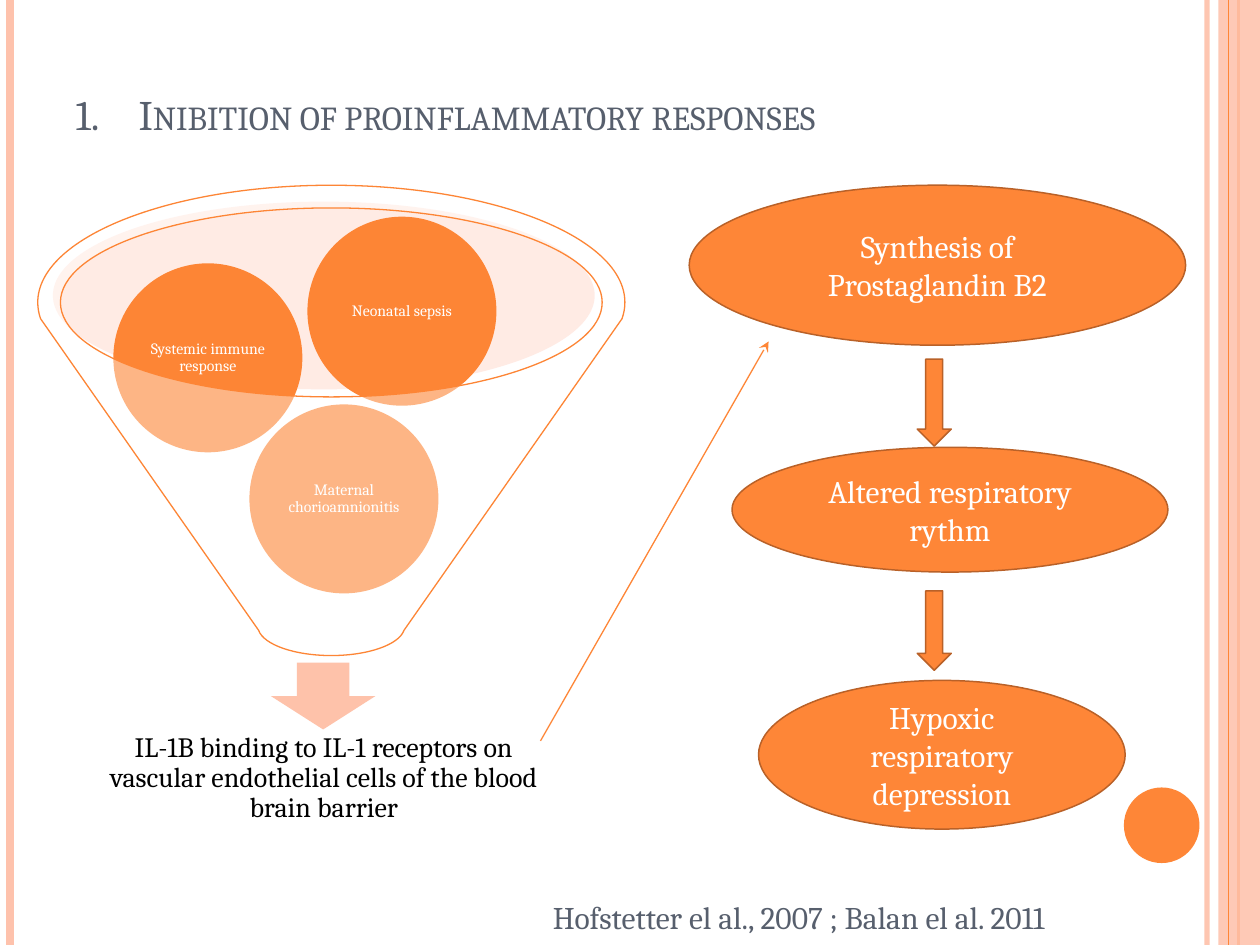
from math import cos, radians, sin, tan

from lxml import etree
from pptx import Presentation
from pptx.dml.color import RGBColor
from pptx.enum.shapes import MSO_CONNECTOR, MSO_SHAPE
from pptx.enum.text import MSO_ANCHOR, PP_ALIGN
from pptx.oxml.ns import qn
from pptx.util import Inches, Pt

STRAIGHT = MSO_CONNECTOR.STRAIGHT
OVAL, RECTANGLE, DOWN_ARROW = MSO_SHAPE.OVAL, MSO_SHAPE.RECTANGLE, MSO_SHAPE.DOWN_ARROW
CENTER, LEFT = PP_ALIGN.CENTER, PP_ALIGN.LEFT
MIDDLE, BOTTOM = MSO_ANCHOR.MIDDLE, MSO_ANCHOR.BOTTOM

ORANGE = RGBColor(0xFE, 0x86, 0x37)
FUNNEL_ORANGE = RGBColor(0xFD, 0x85, 0x35)
DARK_ORANGE = RGBColor(0xB9, 0x61, 0x28)
PEACH = RGBColor(0xFE, 0xC2, 0xAC)
ARROW_PEACH = RGBColor(0xFE, 0xC2, 0xAA)
PALE_PEACH = RGBColor(0xFF, 0xCD, 0xBD)
SLATE = RGBColor(0x57, 0x5F, 0x6D)
WHITE = RGBColor(0xFF, 0xFF, 0xFF)
BLACK = RGBColor(0, 0, 0)
FONT = "Cambria"

WIDTH, HEIGHT = 10, 7.5
TITLE = "Inibition of proinflammatory responses"
CITATION = "Hofstetter el al., 2007 ; Balan el al. 2011"
OUTCOME = "IL-1B binding to IL-1 receptors on vascular endothelial cells of the blood brain barrier"
CAUSES = [
    ("Maternal chorioamnionitis", 1.98, 3.21),
    ("Systemic immune response", 0.9, 2.09),
    ("Neonatal sepsis", 2.44, 1.72),
]
CAUSE_SIZE, LABEL_OFFSET = 1.5, 0.22
EFFECTS = [
    ("Synthesis of Prostaglandin B2", (5.47, 1.47, 3.94, 1.27)),
    ("Altered respiratory rythm", (5.81, 3.55, 3.46, 0.99)),
    ("Hypoxic respiratory depression", (6.02, 5.4, 2.91, 1.18)),
]
EFFECT_ARROWS = [(7.28, 2.85, 0.27, 0.69), (7.28, 4.69, 0.27, 0.63)]
BORDER_LINES = [(9.58, PEACH, 3, 93), (0.08, PEACH, 4.5, 100), (9.83, ORANGE, 1.5, 100)]

FUNNEL_X, RIM_Y, SPOUT_Y = 2.63, 2.4, 4.97
RIM = (2.33, 0.93)
OPENING = (2.15, 0.75)
SPOUT = tuple(radius / 4 for radius in RIM)
RIM_ANGLES = (172, 180, 270, 360, 368)
SPOUT_ANGLES = (8, 90, 172)
OPENING_ANGLES = (180, 90, 0, -90, -180)


def set_alpha(properties, percent):
    color = next(properties.iter(qn("a:srgbClr")))
    etree.SubElement(color, qn("a:alpha"), val=str(percent * 1000))


def write(shape, text, size, color, inset=(0.1, 0.05), spacing=1.0, anchor=MIDDLE, align=CENTER):
    frame = shape.text_frame
    horizontal, vertical = map(Inches, inset)
    frame_format = {
        "word_wrap": True, "vertical_anchor": anchor,
        "margin_left": horizontal, "margin_right": horizontal,
        "margin_top": vertical, "margin_bottom": vertical,
    }
    for name, value in frame_format.items():
        setattr(frame, name, value)
    paragraph = frame.paragraphs[0]
    paragraph.alignment = align
    paragraph.line_spacing = spacing
    run = paragraph.add_run()
    run.text = text
    for name, value in {"name": FONT, "size": Pt(size), "bold": False}.items():
        setattr(run.font, name, value)
    run.font.color.rgb = color
    return paragraph, run


def style(shape, fill, line=None, width=0.85, alpha=100):
    shape.shadow.inherit = False
    shape.fill.solid()
    shape.fill.fore_color.rgb = fill
    if alpha < 100:
        set_alpha(shape.fill._xPr.find(qn("a:solidFill")), alpha)
    if line is None:
        shape.line.fill.background()
    else:
        shape.line.color.rgb = line
        shape.line.width = Pt(width)


def add_shape(shapes, kind, box, fill, **options):
    shape = shapes.add_shape(kind, *map(Inches, box))
    style(shape, fill, **options)
    return shape


def add_label(shapes, box, *content, **options):
    write(shapes.add_textbox(*map(Inches, box)), *content, spacing=0.9, **options)


def add_line(shapes, start, end, color, width, alpha=100):
    line = shapes.add_connector(STRAIGHT, *map(Inches, start + end))
    line.line.color.rgb = color
    line.line.width = Pt(width)
    properties = line._element.spPr
    if alpha < 100:
        set_alpha(properties, alpha)
    etree.SubElement(properties, qn("a:effectLst"))
    return line


def add_border(shapes):
    for x, color, width, alpha in BORDER_LINES:
        add_line(shapes, (x, 0), (x, HEIGHT), color, width, alpha)
    add_shape(shapes, RECTANGLE, (9.67, 0, 0.33, HEIGHT), PEACH, alpha=87)
    add_line(shapes, (9.75, 0), (9.75, HEIGHT), ORANGE, 0.75)
    add_shape(shapes, OVAL, (8.92, 6.25, 0.6, 0.6), ORANGE)


def add_title(title):
    box = dict(zip(("left", "top", "width", "height"), (0.5, 0.3, 8.17, 0.85)))
    for name, value in box.items():
        setattr(title, name, Inches(value))
    paragraph, run = write(title, TITLE, 24, SLATE, anchor=BOTTOM, align=LEFT)
    run.font._element.set("cap", "small")
    properties = paragraph._p.get_or_add_pPr()
    properties.set("marL", str(Inches(0.5)))
    properties.set("indent", str(-Inches(0.5)))
    etree.SubElement(properties, qn("a:buFont"), typeface="+mj-lt")
    etree.SubElement(properties, qn("a:buAutoNum"), type="arabicPeriod")


def arc(center_y, radii, angles):
    def point(angle, pull=0):
        turn = radians(angle)
        x = FUNNEL_X + radii[0] * (cos(turn) - pull * sin(turn))
        y = center_y + radii[1] * (sin(turn) + pull * cos(turn))
        return Inches(x), Inches(y)

    handles = []
    for start, end in zip(angles, angles[1:]):
        pull = 4 / 3 * tan(radians(end - start) / 4)
        handles.append((point(start, pull), point(end, -pull)))
    return [point(angle) for angle in angles], handles


def add_funnel(shapes):
    rim, rim_handles = arc(RIM_Y, RIM, RIM_ANGLES)
    spout, spout_handles = arc(SPOUT_Y, SPOUT, SPOUT_ANGLES)
    opening, opening_handles = arc(RIM_Y, OPENING, OPENING_ANGLES)
    builder = shapes.build_freeform(*rim[0])
    builder.add_line_segments(rim[1:] + spout, close=True)
    builder.move_to(*opening[0])
    builder.add_line_segments(opening[1:], close=True)
    funnel = builder.convert_to_shape()
    segments = list(funnel._element.iter(qn("a:lnTo")))
    for segment, handles in zip(segments, rim_handles + [()] + spout_handles + opening_handles):
        if handles:
            curve = etree.Element(qn("a:cubicBezTo"))
            for x, y in handles:
                etree.SubElement(curve, qn("a:pt"), x=str(x - funnel.left), y=str(y - funnel.top))
            curve.append(segment[0])
            segment.getparent().replace(segment, curve)
    style(funnel, WHITE, line=FUNNEL_ORANGE, width=0.75, alpha=40)


def add_causes(shapes):
    add_shape(shapes, OVAL, (0.42, 1.6, 4.3, 1.49), PALE_PEACH, alpha=40)
    add_shape(shapes, DOWN_ARROW, (2.15, 5.26, 0.83, 0.53), ARROW_PEACH)
    add_label(shapes, (0.57, 5.68, 4, 1), OUTCOME, 16, BLACK, inset=(0.12, 0.12))
    label_size = CAUSE_SIZE - 2 * LABEL_OFFSET
    for text, left, top in CAUSES:
        add_shape(shapes, OVAL, (left, top, CAUSE_SIZE, CAUSE_SIZE), FUNNEL_ORANGE)
        box = (left + LABEL_OFFSET, top + LABEL_OFFSET, label_size, label_size)
        add_label(shapes, box, text, 9, WHITE, inset=(0.01, 0.01))
    add_funnel(shapes)


def add_effects(shapes):
    link = add_line(shapes, (4.29, 5.88), (6.1, 2.71), ORANGE, 0.75)
    etree.SubElement(link.line._get_or_add_ln(), qn("a:tailEnd"), type="stealth")
    for box in EFFECT_ARROWS:
        add_shape(shapes, DOWN_ARROW, box, ORANGE, line=DARK_ORANGE)
    for text, box in EFFECTS:
        write(add_shape(shapes, OVAL, box, ORANGE, line=DARK_ORANGE), text, 18, WHITE)


def main():
    presentation = Presentation()
    presentation.slide_width = Inches(WIDTH)
    presentation.slide_height = Inches(HEIGHT)
    shapes = presentation.slides.add_slide(presentation.slide_layouts[5]).shapes
    add_border(shapes)
    add_title(shapes.title)
    add_causes(shapes.add_group_shape().shapes)
    add_effects(shapes)
    write(add_shape(shapes, RECTANGLE, (3.74, 7.06, 5.2, 0.44), WHITE), CITATION, 18, SLATE)
    presentation.save("out.pptx")


if __name__ == "__main__":
    main()
